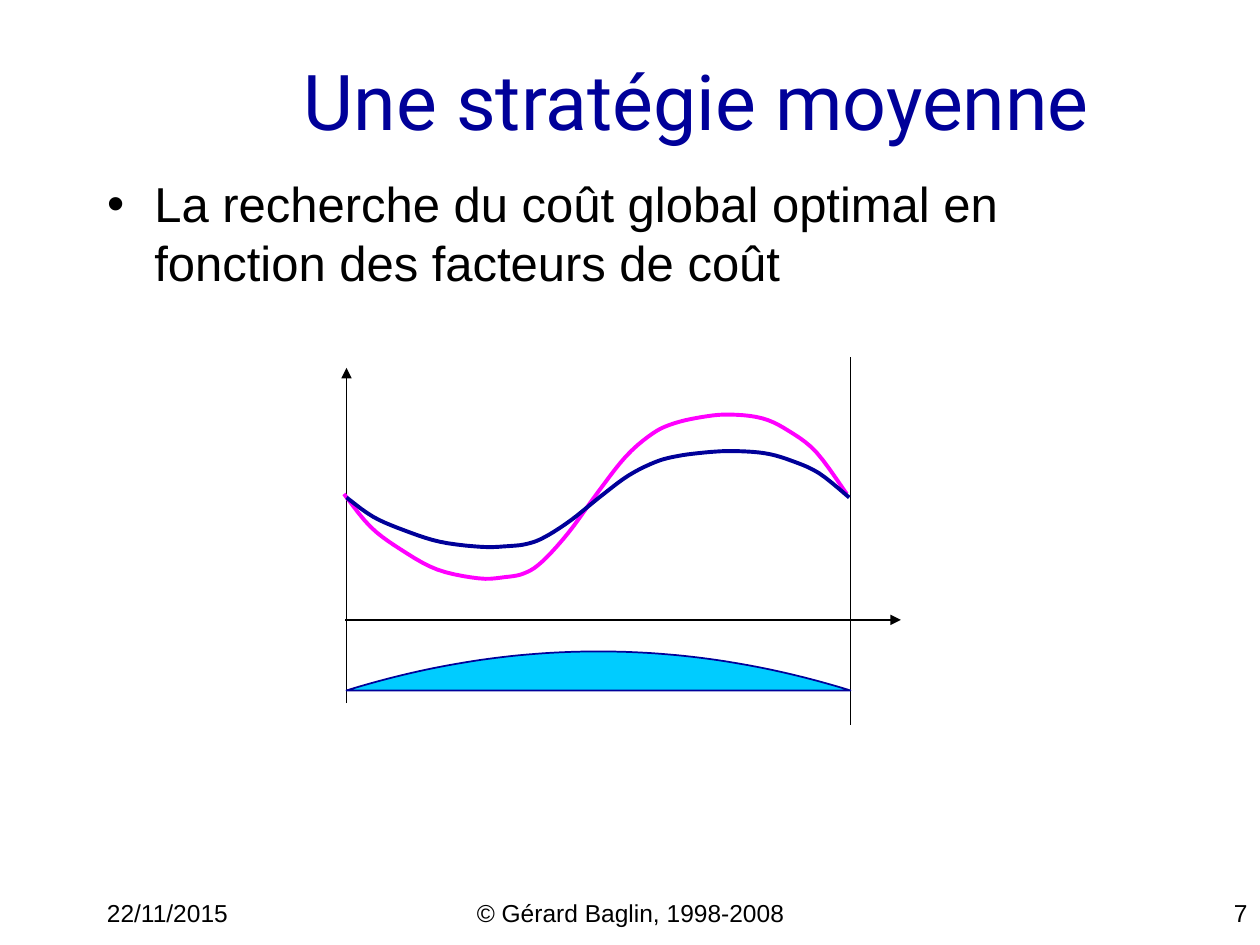
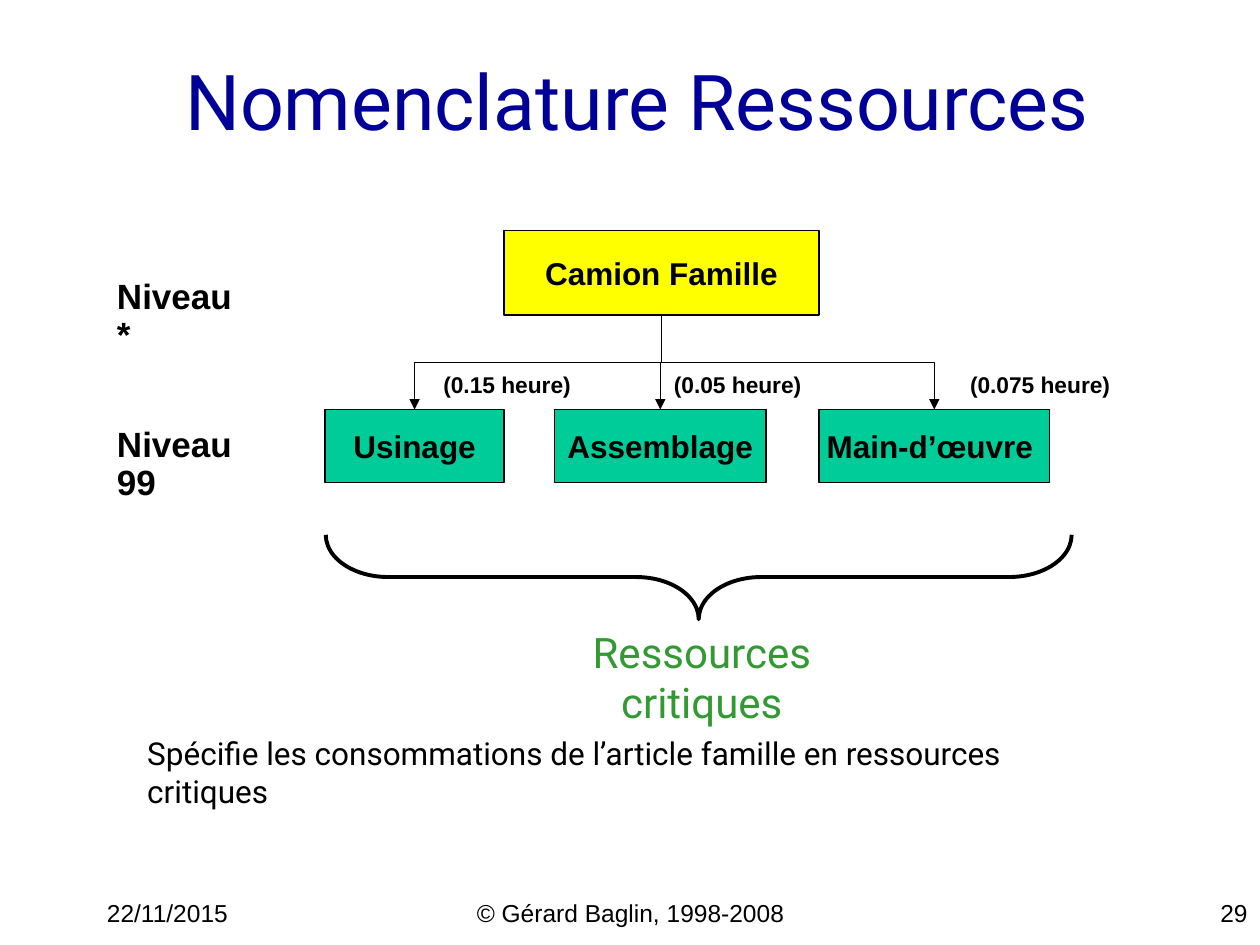
from lxml import etree
from pptx import Presentation
from pptx.dml.color import RGBColor
from pptx.enum import shapes, text
from pptx.oxml.ns import qn
from pptx.util import Inches, Pt

COLORS = {
    "ink": "000000", "navy": "000099", "pink": "FF00FF", "sky": "00CCFF",
    "jade": "00CC99", "sun": "FFFF00", "leaf": "339933",
}
LEFT, MID, RIGHT = (text.PP_ALIGN.LEFT, text.PP_ALIGN.CENTER,
                    text.PP_ALIGN.RIGHT)

# Peak-and-trough demand curve, as knots of a smooth line
DEMAND = [
    (2.73, 3.92), (2.94, 4.18), (3.18, 4.36), (3.47, 4.52), (3.8, 4.59),
    (4.01, 4.58), (4.16, 4.55), (4.3, 4.46), (4.51, 4.23), (4.75, 3.9),
    (4.97, 3.62), (5.18, 3.44), (5.35, 3.36), (5.57, 3.31), (5.79, 3.29),
    (6.05, 3.32), (6.26, 3.42), (6.48, 3.59), (6.72, 3.92),
]


def rgb(name):
    return RGBColor.from_string(COLORS[name])


def place(shape, box):
    shape.left, shape.top, shape.width, shape.height = map(Inches, box)


def write(shape, words, size, font="Arial", color="ink", bold=False,
          align=LEFT, wrap=True, space=None):
    frame = shape.text_frame
    frame.text = words
    frame.word_wrap = wrap
    frame.auto_size = text.MSO_AUTO_SIZE.NONE
    par = frame.paragraphs[0]
    par.alignment = align
    par.line_spacing = space
    face = par.runs[0].font
    face.name, face.size, face.bold = font, Pt(size), bold
    face.color.rgb = rgb(color)


def label(slide, words, box, size, **style):
    write(slide.shapes.add_textbox(*map(Inches, box)), words, size, **style)


def paint(shape, line, width, fill=None):
    shape.shadow.inherit = False
    shape.line.color.rgb = rgb(line)
    shape.line.width = Pt(width)
    if fill:
        shape.fill.solid()
        shape.fill.fore_color.rgb = rgb(fill)
    else:
        shape.fill.background()


def block(slide, words, box, fill):
    shape = slide.shapes.add_shape(shapes.MSO_SHAPE.RECTANGLE,
                                   *map(Inches, box))
    paint(shape, "ink", 0.75, fill)
    shape.text_frame.vertical_anchor = text.MSO_ANCHOR.MIDDLE
    write(shape, words, 18, bold=True, align=MID, wrap=False)


def link(slide, start, end, width=1, arrow=True,
         kind=shapes.MSO_CONNECTOR.STRAIGHT):
    line = slide.shapes.add_connector(kind, *map(Inches, start + end))
    line.line.color.rgb = rgb("ink")
    line.line.width = Pt(width)
    props = line._element.spPr
    if arrow:
        etree.SubElement(props.find(qn("a:ln")), qn("a:tailEnd"),
                         type="triangle")
    etree.SubElement(props, qn("a:effectLst"))
    return line


def branch(slide, start, end):
    """Elbow that leaves downwards: a level elbow turned by a quarter."""
    (x1, y1), (x2, y2) = start, end
    cx, cy = (x1 + x2) / 2, (y1 + y2) / 2
    run, rise = (y2 - y1) / 2, (x2 - x1) / 2
    line = link(slide, (cx - run, cy + rise), (cx + run, cy - rise), 0.75,
                kind=shapes.MSO_CONNECTOR.ELBOW)
    line._element.spPr.find(qn("a:xfrm")).set("rot", str(90 * 60000))


def outline(slide, points, line, width, fill=None):
    dots = [(Inches(x), Inches(y)) for x, y in points]
    pen = slide.shapes.build_freeform(*dots[0])
    pen.add_line_segments(dots[1:], close=bool(fill))
    paint(pen.convert_to_shape(), line, width, fill)


def smooth(knots, steps=5):
    """Catmull-Rom line through the knots."""
    pts = [knots[0], *knots, knots[-1]]
    curve = []
    for a, b, c, d in zip(pts, pts[1:], pts[2:], pts[3:]):
        for i in range(steps):
            t = i / steps
            curve.append(tuple(
                q + t * (r - p + t * (2 * p - 5 * q + 4 * r - s
                                      + t * (3 * q - p - 3 * r + s))) / 2
                for p, q, r, s in zip(a, b, c, d)))
    return curve + [knots[-1]]


def start(deck, layout, title, number):
    """New slide with the shared title and footer."""
    slide = deck.slides.add_slide(deck.slide_layouts[layout])
    head = slide.shapes.title
    place(head, (0.25, 0.17, 8.5, 1.25))
    head.text_frame.vertical_anchor = text.MSO_ANCHOR.MIDDLE
    write(head, title, 44, font="Roboto", color="navy", align=RIGHT)
    for words, left, width, align in (
            ("22/11/2015", 0.75, 2.08, LEFT),
            ("© Gérard Baglin, 1998-2008", 3.42, 3.17, MID),
            (str(number), 7.92, 2.08, RIGHT)):
        label(slide, words, (left, 7.08, width, 0.25), 14, align=align)
    return slide


def strategy(deck):
    slide = start(deck, 1, "Une stratégie moyenne", 7)
    body = slide.placeholders[1]
    place(body, (0.75, 1.33, 8.5, 1.17))
    write(body, "La recherche du coût global optimal en fonction "
                "des facteurs de coût", 28)

    # Axes and end of the period
    link(slide, (2.75, 5.58), (2.75, 2.92))
    link(slide, (2.74, 4.92), (7.15, 4.92))
    link(slide, (6.75, 5.75), (6.75, 2.83), arrow=False)

    # Demand, and production as a flatter demand
    demand = smooth(DEMAND)
    outline(slide, demand, "pink", 2.25)
    flat = [(x + 0.02, 3.58 + 0.585 * (y - 3.29)) for x, y in demand]
    outline(slide, flat, "navy", 2.25)

    # Stock: a parabola above its base
    steps = [i / 32 for i in range(-32, 33)]
    stock = [(4.75 + 2 * t, 5.17 + 0.31 * t * t) for t in steps]
    outline(slide, stock, "navy", 1, "sky")


def resources(deck):
    slide = start(deck, 5, "Nomenclature Ressources", 29)

    # Levels
    for words, top, width in (("Niveau *", 2.17, 1.29),
                              ("Niveau 99", 3.34, 1.49)):
        label(slide, words, (0.83, top, width, 0.4), 20, bold=True, space=0.9)

    # Family and its resources
    block(slide, "Camion Famille", (4, 1.83, 2.5, 0.67), "sun")
    for words, left, width, hours, spot in (
            ("Usinage", 2.58, 1.42, "(0.15 heure)", 3.42),
            ("Assemblage", 4.4, 1.68, "(0.05 heure)", 5.25),
            ("Main-d’œuvre ", 6.5, 1.83, "(0.075 heure)", 7.6)):
        block(slide, words, (left, 3.25, width, 0.58), "jade")
        branch(slide, (5.25, 2.5), (left + width / 2, 3.25))
        label(slide, hours, (spot, 2.92, 1.22 if spot < 7 else 1.32, 0.29),
              13, bold=True, wrap=False, space=0.9)

    # Brace and remarks
    brace = slide.shapes.add_shape(shapes.MSO_SHAPE.RIGHT_BRACE,
                                   *map(Inches, (5.21, 1.62, 0.67, 5.92)))
    brace.rotation = 90
    brace.adjustments[0] = 0.74
    paint(brace, "ink", 2.25)
    label(slide, "Ressources critiques", (3.98, 4.92, 3.18, 0.5), 24,
          font="Roboto", color="leaf", align=MID)
    label(slide, "Spécifie les consommations de l’article famille en "
          "ressources critiques", (1.07, 5.78, 7.82, 0.4), 18, font="Roboto")


def main():
    deck = Presentation()
    deck.slide_width, deck.slide_height = Inches(10), Inches(7.5)
    strategy(deck)
    resources(deck)
    deck.save("out.pptx")


if __name__ == "__main__":
    main()
